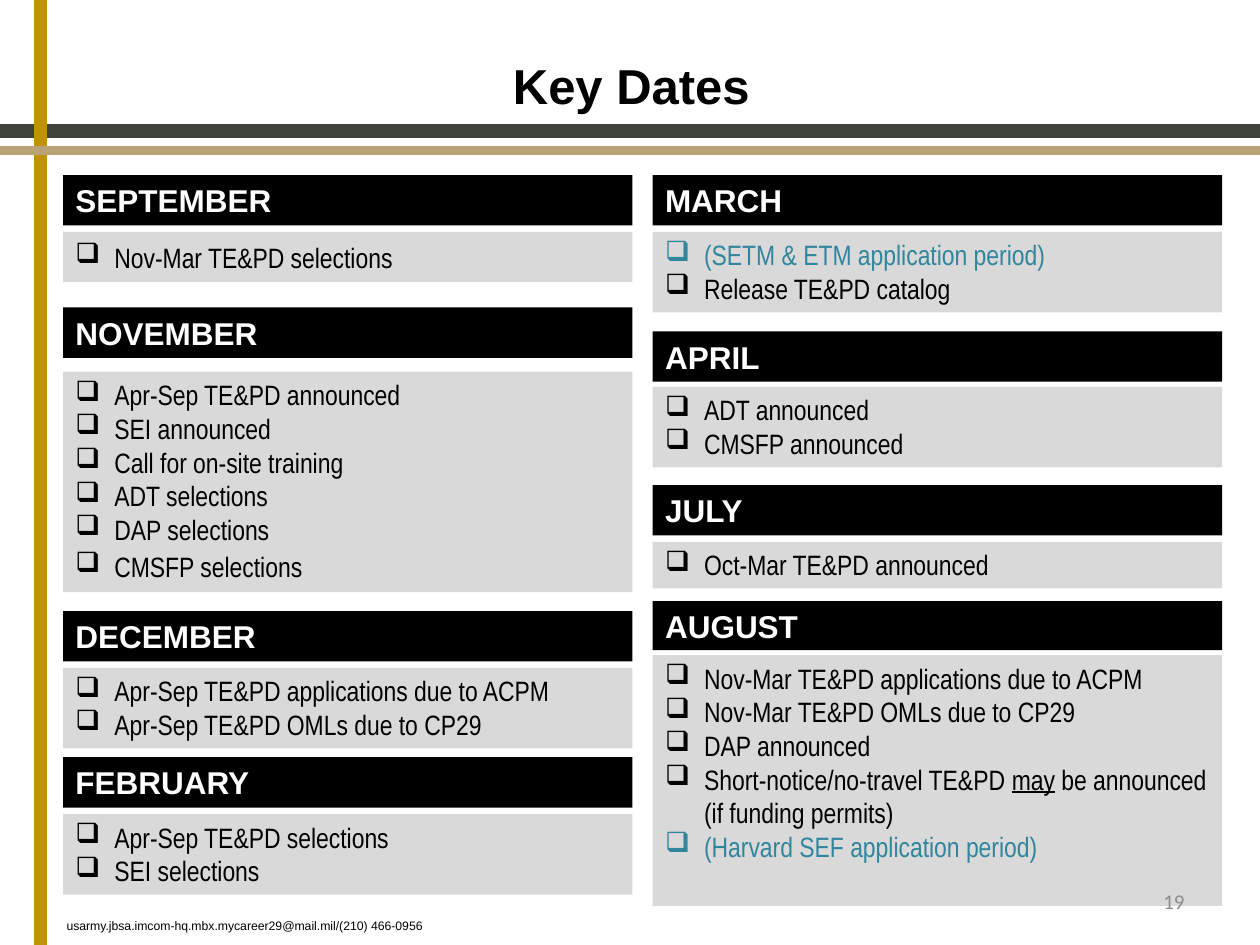
"""Build the Key Dates slide: two columns of monthly milestone cards."""
from dataclasses import dataclass

import lxml.etree
import pptx
import pptx.dml.color
import pptx.enum.shapes
import pptx.enum.text
import pptx.oxml.ns
import pptx.util

Inches = pptx.util.Inches
Pt = pptx.util.Pt
Align = pptx.enum.text.PP_ALIGN
Anchor = pptx.enum.text.MSO_ANCHOR
qn = pptx.oxml.ns.qn

COLORS = {
    "black": "000000", "white": "FFFFFF", "panel": "D9D9D9", "teal": "31859C",
    "slate": "3F4339", "gold": "BF9305", "tan": "BBA276", "gray": "8C8C8C",
}
COLUMN_LEFTS = (0.5, 5.18)
CARD_WIDTH = 4.52
HANGING = 0.31


@dataclass(frozen=True)
class Item:
    text: str
    color: str = "black"
    underlined: str = ""
    space_before: float = 0


@dataclass(frozen=True)
class Month:
    name: str
    column: int
    top: float
    list_top: float
    list_height: float
    items: tuple[Item, ...]
    header_height: float = 0.4
    anchor: Anchor = Anchor.TOP


@dataclass(frozen=True)
class Stripe:
    left: float
    top: float
    width: float
    height: float
    color: str


STRIPES = (
    Stripe(0, 1, 10, 0.08, "slate"),
    Stripe(0.28, 0, 0.08, 7.5, "gold"),
    Stripe(0, 1.17, 10, 0.05, "tan"),
)

MONTHS = (
    Month("SEPTEMBER", 0, 1.39, 1.84, 0.4,
          (Item("Nov-Mar TE&PD selections"),), anchor=Anchor.MIDDLE),
    Month("NOVEMBER", 0, 2.44, 2.95, 1.75, (
        Item("Apr-Sep TE&PD announced"),
        Item("SEI announced"),
        Item("Call for on-site training"),
        Item("ADT selections"),
        Item("DAP selections"),
        Item("CMSFP selections", space_before=2),
    )),
    Month("DECEMBER", 0, 4.85, 5.3, 0.64, (
        Item("Apr-Sep TE&PD applications due to ACPM"),
        Item("Apr-Sep TE&PD OMLs due to CP29"),
    )),
    Month("FEBRUARY", 0, 6.01, 6.46, 0.64, (
        Item("Apr-Sep TE&PD selections"),
        Item("SEI selections"),
    )),
    Month("MARCH", 1, 1.39, 1.84, 0.64, (
        Item("(SETM & ETM application period)", "teal"),
        Item("Release TE&PD catalog"),
    )),
    Month("APRIL", 1, 2.63, 3.07, 0.64, (
        Item("ADT announced"),
        Item("CMSFP announced"),
    )),
    Month("JULY", 1, 3.85, 4.3, 0.37, (Item("Oct-Mar TE&PD announced"),)),
    Month("AUGUST", 1, 4.77, 5.2, 1.99, (
        Item("Nov-Mar TE&PD applications due to ACPM"),
        Item("Nov-Mar TE&PD OMLs due to CP29"),
        Item("DAP announced"),
        Item("Short-notice/no-travel TE&PD may be announced (if funding permits)",
             underlined="may"),
        Item("(Harvard SEF application period)", "teal"),
    ), header_height=0.39),
)


def rgb(color: str) -> pptx.dml.color.RGBColor:
    """Return the named colour."""
    return pptx.dml.color.RGBColor.from_string(COLORS[color])


def style_run(run, size: float, font: str, color: str, bold: bool = False) -> None:
    """Set the font of a run."""
    run.font.size = Pt(size)
    run.font.name = font
    run.font.bold = bold
    run.font.color.rgb = rgb(color)


def add_rect(slide, left: float, top: float, width: float, height: float, color: str):
    """Add a flat filled rectangle without a line."""
    rect = slide.shapes.add_shape(
        pptx.enum.shapes.MSO_SHAPE.RECTANGLE,
        Inches(left), Inches(top), Inches(width), Inches(height))
    rect.shadow.inherit = False
    rect.fill.solid()
    rect.fill.fore_color.rgb = rgb(color)
    rect.line.fill.background()
    return rect


def add_stripe(slide, stripe: Stripe) -> None:
    """Add a stripe outlined in its own colour."""
    band = add_rect(slide, stripe.left, stripe.top, stripe.width, stripe.height, stripe.color)
    band.line.color.rgb = rgb(stripe.color)
    band.line.width = Pt(2)


def add_label(slide, left: float, top: float, width: float, height: float, text: str,
              size: float, font: str, color: str, align: Align = Align.LEFT,
              anchor: Anchor = Anchor.TOP, bold: bool = False):
    """Add a one-line text box and return its run."""
    label = slide.shapes.add_textbox(Inches(left), Inches(top), Inches(width), Inches(height))
    frame = label.text_frame
    frame.word_wrap = True
    frame.vertical_anchor = anchor
    frame.text = text
    paragraph = frame.paragraphs[0]
    paragraph.alignment = align
    style_run(paragraph.runs[0], size, font, color, bold)
    return paragraph.runs[0]


def add_text_shadow(run) -> None:
    """Give a run a soft shadow to the lower right."""
    effects = lxml.etree.Element(qn("a:effectLst"))
    shadow = lxml.etree.SubElement(
        effects, qn("a:outerShdw"), blurRad="38100", dist="38100", dir="2700000", algn="tl")
    shade = lxml.etree.SubElement(shadow, qn("a:srgbClr"), val=COLORS["black"])
    lxml.etree.SubElement(shade, qn("a:alpha"), val="43000")
    run.font.fill.fore_color.rgb = rgb("black")
    run.font._element.find(qn("a:solidFill")).addnext(effects)


def write_item(paragraph, item: Item) -> None:
    """Write a checklist item with its box bullet and hanging indent."""
    properties = paragraph._p.get_or_add_pPr()
    properties.set("marL", str(Inches(HANGING)))
    properties.set("indent", str(-Inches(HANGING)))
    lxml.etree.SubElement(properties, qn("a:buChar"), char="❑")
    paragraph.alignment = Align.LEFT
    if item.space_before:
        paragraph.space_before = Pt(item.space_before)
    parts = item.text.partition(item.underlined) if item.underlined else (item.text,)
    for part in parts:
        run = paragraph.add_run()
        run.text = part
        style_run(run, 16, "Arial Narrow", item.color)
        if part == item.underlined:
            run.font.underline = True


def add_month(slide, month: Month) -> None:
    """Add the header and checklist of one month."""
    left = COLUMN_LEFTS[month.column]
    header = add_rect(slide, left, month.top, CARD_WIDTH, month.header_height, "black").text_frame
    header.vertical_anchor = Anchor.TOP
    header.text = month.name
    header.paragraphs[0].alignment = Align.LEFT
    style_run(header.paragraphs[0].runs[0], 18, "Arial", "white", bold=True)

    checklist = add_rect(
        slide, left, month.list_top, CARD_WIDTH, month.list_height, "panel").text_frame
    checklist.word_wrap = True
    checklist.vertical_anchor = month.anchor
    for index, item in enumerate(month.items):
        paragraph = checklist.add_paragraph() if index else checklist.paragraphs[0]
        write_item(paragraph, item)


def main() -> None:
    """Build and save the slide."""
    deck = pptx.Presentation()
    deck.slide_width, deck.slide_height = Inches(10), Inches(7.5)
    slide = deck.slides.add_slide(deck.slide_layouts[6])
    for stripe in STRIPES:
        add_stripe(slide, stripe)
    title = add_label(slide, 0.14, 0.05, 9.74, 1.25, "Key Dates", 28, "Arial", "black",
                      Align.CENTER, Anchor.MIDDLE, bold=True)
    add_text_shadow(title)
    add_label(slide, 0.43, 7.24, 3.76, 0.22,
              "usarmy.jbsa.imcom-hq.mbx.mycareer29@mail.mil/(210) 466-0956",
              7, "Arial", "black")
    for month in MONTHS:
        add_month(slide, month)
    add_label(slide, 7.17, 6.95, 2.33, 0.4, "19", 12, "Calibri", "gray",
              Align.RIGHT, Anchor.MIDDLE)
    deck.save("out.pptx")


if __name__ == "__main__":
    main()
